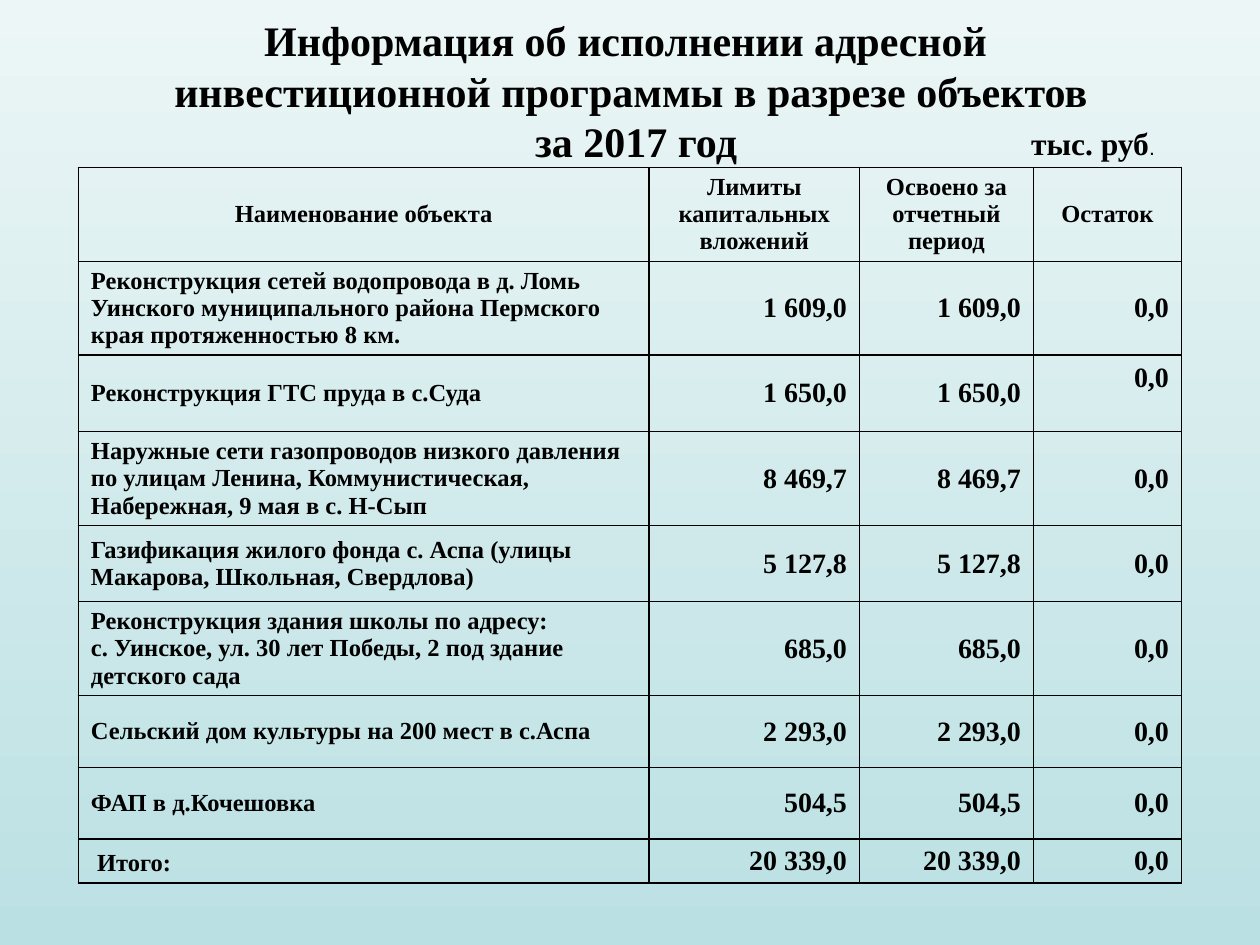
import pptx
import pptx.dml.color
import pptx.enum.text
import pptx.oxml
import pptx.oxml.ns
import pptx.util

Pt = pptx.util.Pt
ALIGN = pptx.enum.text.PP_ALIGN
ANCHOR = pptx.enum.text.MSO_ANCHOR
INK = "000000"


def color(value):
    return pptx.dml.color.RGBColor.from_string(value)


def write(frame, text, size=14, align=ALIGN.LEFT):
    """Fill a text frame with bold text, one paragraph per line."""
    frame.word_wrap = True
    for index, line in enumerate(text.split("\n")):
        paragraph = frame.add_paragraph() if index else frame.paragraphs[0]
        paragraph.alignment = align
        paragraph.line_spacing = 1.0
        run = paragraph.add_run()
        run.text = line
        run.font.size = Pt(size)
        run.font.name = "Times New Roman"
        run.font.bold = True
        run.font.color.rgb = color(INK)


presentation = pptx.Presentation()
presentation.slide_width = Pt(720)
presentation.slide_height = Pt(540)
slide = presentation.slides.add_slide(presentation.slide_layouts[6])

# Background gradient, light at the top
background = slide.background.fill
background.gradient()
background.gradient_angle = 270
for stop, value in zip(background.gradient_stops, ("ECF6F6", "BBE0E3")):
    stop.color.rgb = color(value)

# Title
title = slide.shapes.add_textbox(Pt(36.5), Pt(15), Pt(648), Pt(73.5))
title.text_frame.vertical_anchor = ANCHOR.MIDDLE
write(
    title.text_frame,
    "Информация об исполнении адресной \n"
    "инвестиционной программы в разрезе объектов\n"
    " за 2017 год",
    size=24, align=ALIGN.CENTER,
)

# Table contents
header = ["Наименование объекта", "Лимиты капитальных вложений",
          "Освоено за отчетный период", "Остаток"]
objects = [
    ("Реконструкция сетей водопровода в д. Ломь Уинского муниципального "
     "района Пермского края протяженностью 8 км.", "1 609,0"),
    ("Реконструкция ГТС пруда в с.Суда", "1 650,0"),
    ("Наружные сети газопроводов низкого давления по улицам Ленина, "
     "Коммунистическая, Набережная, 9 мая в с. Н-Сып", "8 469,7"),
    ("Газификация жилого фонда с. Аспа (улицы Макарова, Школьная, Свердлова)",
     "5 127,8"),
    ("Реконструкция здания школы по адресу:\n"
     "с. Уинское, ул. 30 лет Победы, 2 под здание детского сада", "685,0"),
    ("Сельский дом культуры на 200 мест в с.Аспа", "2 293,0"),
    ("ФАП в д.Кочешовка", "504,5"),
    ("Итого:", "20 339,0"),
]
# Limits are fully spent, so both amounts match and nothing remains
rows = [header] + [[name, amount, amount, "0,0"] for name, amount in objects]
column_widths = [326.2, 120.2, 99.4, 84.6]
row_heights = [53.7, 53.7, 43.7, 53.7, 43.5, 53.7, 41, 41, 25]

# Table
table_shape = slide.shapes.add_table(
    len(rows), len(header), Pt(44.8), Pt(95.6),
    Pt(sum(column_widths)), Pt(sum(row_heights)))
table = table_shape.table
table.first_row = False
table.horz_banding = False
for column, width in zip(table.columns, column_widths):
    column.width = Pt(width)
for row, height in zip(table.rows, row_heights):
    row.height = Pt(height)

last_row = len(rows) - 1
for row_index, row in enumerate(rows):
    for column_index, text in enumerate(row):
        cell = table.cell(row_index, column_index)
        is_total = row_index == last_row
        cell.vertical_anchor = ANCHOR.BOTTOM if is_total else ANCHOR.MIDDLE
        cell.margin_top = Pt(1.5)
        cell.margin_bottom = Pt(3.6 if is_total else 1.5)
        if row_index == 0:
            write(cell.text_frame, text, align=ALIGN.CENTER)
        elif column_index == 0:
            write(cell.text_frame, text)
        else:
            write(cell.text_frame, text, size=16, align=ALIGN.RIGHT)

        # Black borders come before the fill in the cell properties
        properties = cell._tc.get_or_add_tcPr()
        for side in ("lnL", "lnR", "lnT", "lnB"):
            properties.append(pptx.oxml.parse_xml(
                f'<a:{side} {pptx.oxml.ns.nsdecls("a")} w="{Pt(1)}">'
                f'<a:solidFill><a:srgbClr val="{INK}"/></a:solidFill></a:{side}>'))
        cell.fill.background()

# One remainder sits higher, and the total label is slightly indented
table.cell(2, 3).margin_bottom = Pt(18.7)
table.cell(last_row, 0).margin_left = Pt(10.7)

# Unit label
unit = slide.shapes.add_textbox(Pt(573.8), Pt(67.2), Pt(101.5), Pt(28.8))
write(unit.text_frame, "тыс. руб", size=18, align=ALIGN.CENTER)
period = unit.text_frame.paragraphs[0].add_run()
period.text = "."
period.font.size = Pt(12)
period.font.name = "Arial"
period.font.bold = False
period.font.color.rgb = color(INK)

presentation.save("out.pptx")
